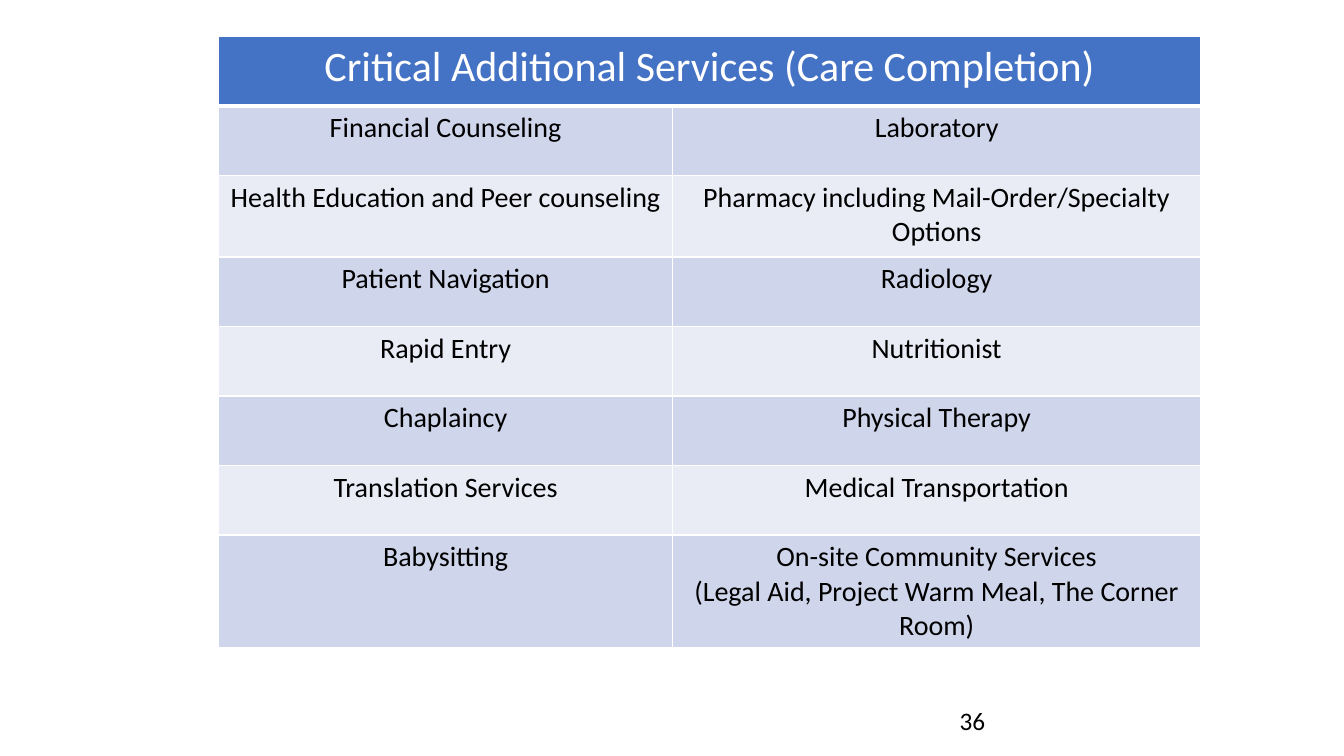
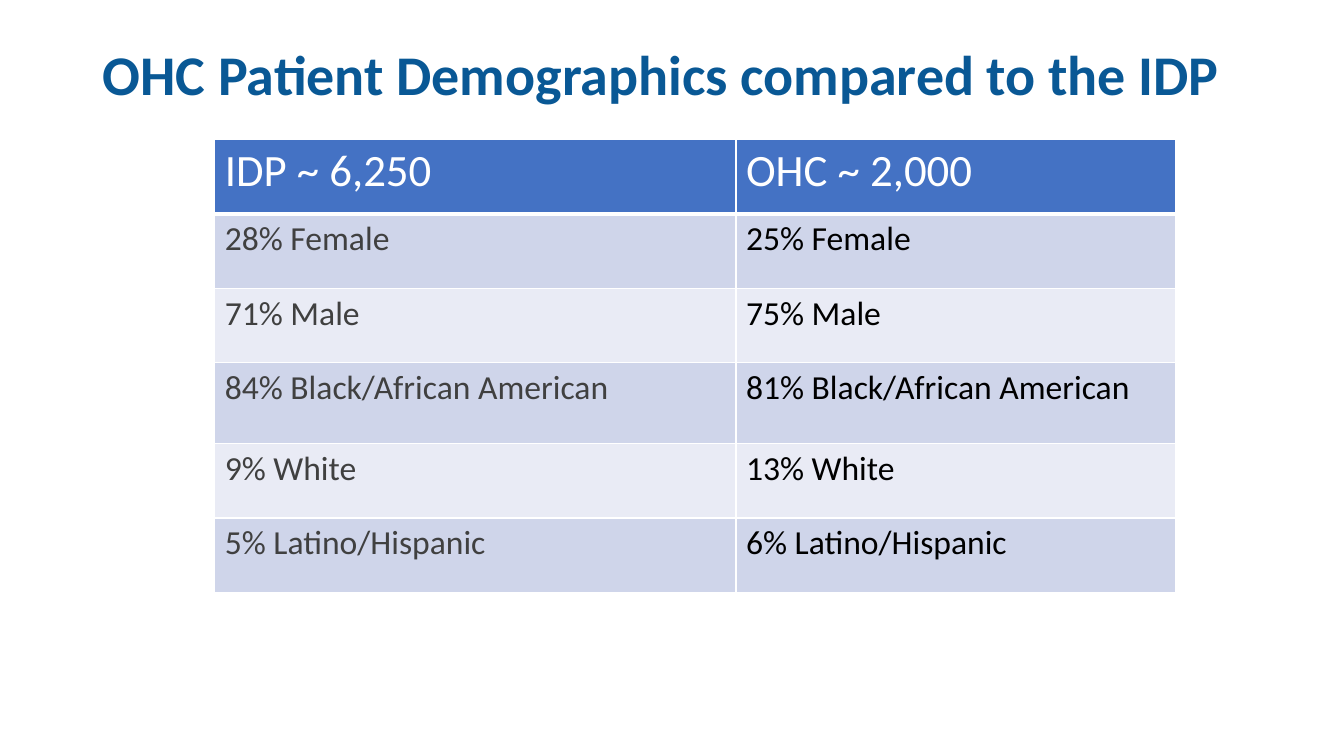
"""Build two slides of clinic tables: additional services and patient demographics."""
from dataclasses import dataclass
from typing import Any

from lxml import etree
from pptx import Presentation
from pptx.dml.color import RGBColor
from pptx.enum import text as t
from pptx.oxml import ns
from pptx.util import Inches, Pt


@dataclass(frozen=True)
class Theme:
    font: str = "Calibri"
    title: str = "095895"
    header: str = "4472C4"
    bands: tuple[str, str] = ("CFD5EA", "E9EBF5")
    white: str = "FFFFFF"
    black: str = "000000"
    gray: str = "404040"
    title_size: int = 40
    number_size: int = 18
    line_width: int = 1
    header_line_width: int = 3


@dataclass(frozen=True)
class TableSpec:
    left: float
    top: float
    column_widths: tuple[float, ...]
    row_heights: tuple[float, ...]
    header: tuple[str, ...]
    rows: tuple[tuple[str, ...], ...]
    header_size: int
    body_size: int
    column_colors: tuple[str, ...]
    alignment: t.PP_ALIGN


THEME = Theme()

SERVICES = TableSpec(
    left=2.17,
    top=0.36,
    column_widths=(4.5, 5.24),
    row_heights=(0.69, 0.69, 0.81, 0.69, 0.69, 0.69, 0.69, 0.98),
    header=("Critical Additional Services (Care Completion)",),
    rows=(
        ("Financial Counseling", "Laboratory"),
        ("Health Education and Peer counseling", "Pharmacy including Mail-Order/Specialty Options"),
        ("Patient Navigation", "Radiology"),
        ("Rapid Entry", "Nutritionist"),
        ("Chaplaincy", "Physical Therapy"),
        ("Translation Services", "Medical Transportation"),
        ("Babysitting", "On-site Community Services\n(Legal Aid, Project Warm Meal, The Corner Room)"),
    ),
    header_size=30,
    body_size=20,
    column_colors=(THEME.black, THEME.black),
    alignment=t.PP_ALIGN.CENTER,
)

DEMOGRAPHICS = TableSpec(
    left=2.13,
    top=1.38,
    column_widths=(5.17, 4.36),
    row_heights=(0.74, 0.74, 0.74, 0.8, 0.74, 0.74),
    header=("IDP ~ 6,250", "OHC ~ 2,000"),
    rows=(
        ("28% Female", "25% Female"),
        ("71% Male", "75% Male"),
        ("84% Black/African American", "81% Black/African American"),
        ("9% White", "13% White"),
        ("5% Latino/Hispanic", "6% Latino/Hispanic"),
    ),
    header_size=32,
    body_size=24,
    column_colors=(THEME.gray, THEME.black),
    alignment=t.PP_ALIGN.LEFT,
)


def style_text(frame: Any, size: int, color: str, alignment: t.PP_ALIGN, bold: bool = False) -> None:
    """Give every paragraph of a text frame the same font and alignment."""
    for paragraph in frame.paragraphs:
        paragraph.alignment = alignment
        paragraph.font.name = THEME.font
        paragraph.font.size = Pt(size)
        paragraph.font.bold = bold
        paragraph.font.color.rgb = RGBColor.from_string(color)


def set_borders(cell: Any, bottom_width: int) -> None:
    """Draw white lines on the four sides of a cell."""
    properties = cell._tc.get_or_add_tcPr()
    widths = {"lnL": THEME.line_width, "lnR": THEME.line_width, "lnT": THEME.line_width, "lnB": bottom_width}
    for position, (tag, width) in enumerate(widths.items()):
        line = etree.Element(ns.qn(f"a:{tag}"), w=str(int(Pt(width))))
        fill = etree.SubElement(line, ns.qn("a:solidFill"))
        etree.SubElement(fill, ns.qn("a:srgbClr"), val=THEME.white)
        properties.insert(position, line)


def style_cell(cell: Any, fill: str, bottom_width: int) -> None:
    """Fill a cell and draw its borders."""
    cell.fill.solid()
    cell.fill.fore_color.rgb = RGBColor.from_string(fill)
    set_borders(cell, bottom_width)


def add_data_table(slide: Any, spec: TableSpec) -> None:
    """Add a table with a header row and banded body rows."""
    frame = slide.shapes.add_table(
        len(spec.row_heights), len(spec.column_widths), Inches(spec.left), Inches(spec.top),
        Inches(sum(spec.column_widths)), Inches(sum(spec.row_heights)),
    )
    table = frame.table
    for column, width in zip(table.columns, spec.column_widths):
        column.width = Inches(width)
    for row, height in zip(table.rows, spec.row_heights):
        row.height = Inches(height)

    for cell in table.rows[0].cells:
        style_cell(cell, THEME.header, THEME.header_line_width)
    if len(spec.header) < len(spec.column_widths):
        table.cell(0, 0).merge(table.cell(0, len(spec.column_widths) - 1))
    for column_index, label in enumerate(spec.header):
        cell = table.cell(0, column_index)
        cell.text = label
        style_text(cell.text_frame, spec.header_size, THEME.white, spec.alignment)

    for row_index, labels in enumerate(spec.rows):
        for column_index, label in enumerate(labels):
            cell = table.cell(row_index + 1, column_index)
            cell.text = label
            style_cell(cell, THEME.bands[row_index % 2], THEME.line_width)
            style_text(cell.text_frame, spec.body_size, spec.column_colors[column_index], spec.alignment)


def add_slide_number(slide: Any, number: str) -> None:
    """Add the page number at the foot of a slide."""
    shape = slide.shapes.add_textbox(Inches(9.42), Inches(6.95), Inches(3), Inches(0.4))
    shape.text_frame.word_wrap = True
    shape.text_frame.text = number
    style_text(shape.text_frame, THEME.number_size, THEME.black, t.PP_ALIGN.LEFT)


def set_title(slide: Any, title: str) -> None:
    """Place and format the title placeholder."""
    shape = slide.shapes.title
    shape.left, shape.top = Inches(0.92), Inches(0.31)
    shape.width, shape.height = Inches(11.5), Inches(0.91)
    frame = shape.text_frame
    frame.text = title
    frame.auto_size = t.MSO_AUTO_SIZE.NONE
    frame.vertical_anchor = t.MSO_ANCHOR.MIDDLE
    frame.paragraphs[0].line_spacing = 0.9
    style_text(frame, THEME.title_size, THEME.title, t.PP_ALIGN.LEFT, bold=True)


def main() -> None:
    """Build and save the presentation."""
    presentation = Presentation()
    presentation.slide_width, presentation.slide_height = Inches(13.33), Inches(7.5)
    title_only, blank = presentation.slide_layouts[5], presentation.slide_layouts[6]

    services_slide = presentation.slides.add_slide(blank)
    add_data_table(services_slide, SERVICES)
    add_slide_number(services_slide, "36")

    demographics_slide = presentation.slides.add_slide(title_only)
    set_title(demographics_slide, "OHC Patient Demographics compared to the IDP")
    add_data_table(demographics_slide, DEMOGRAPHICS)

    presentation.save("out.pptx")


if __name__ == "__main__":
    main()
